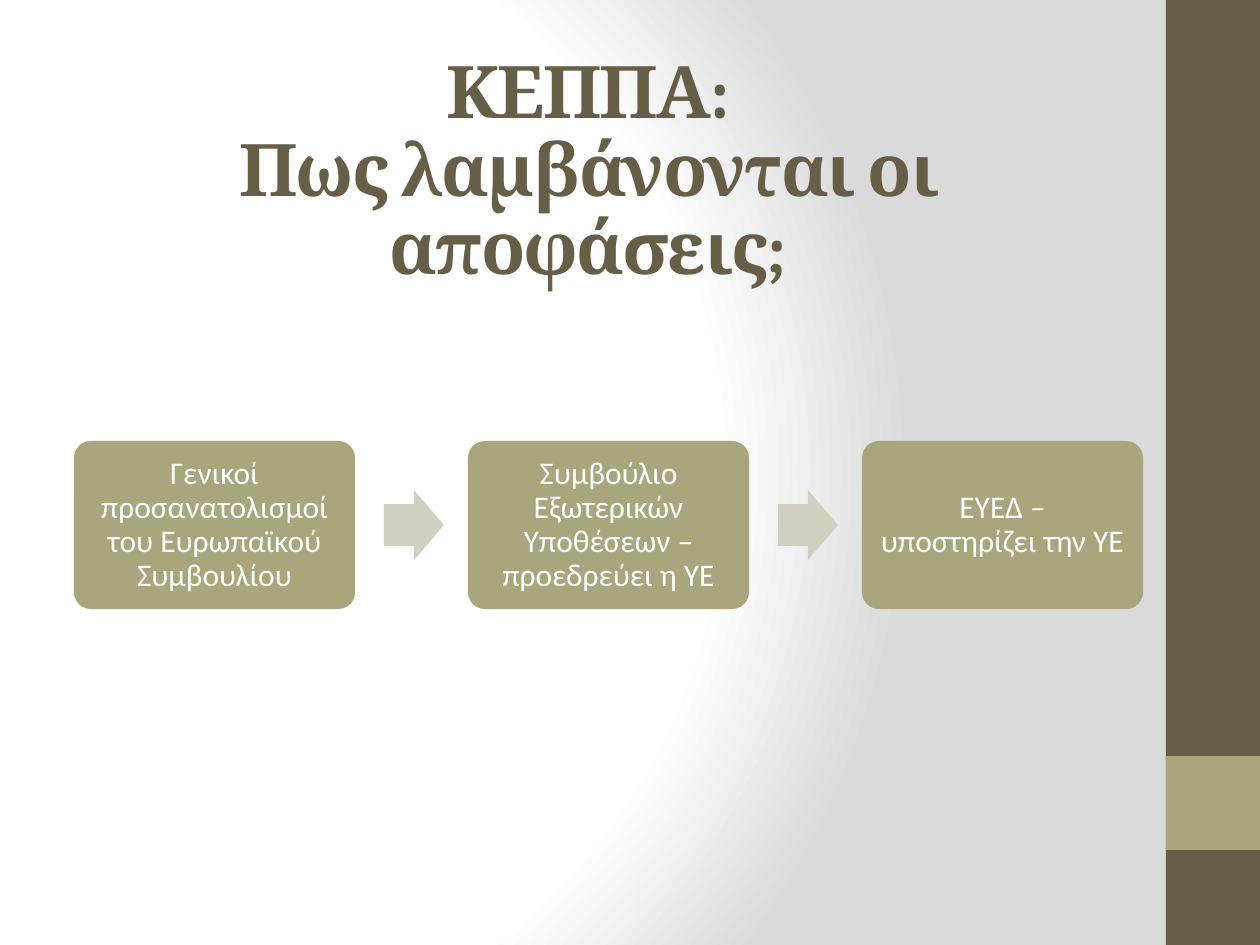
from pptx import Presentation
from pptx.dml.color import RGBColor
from pptx.enum.shapes import MSO_SHAPE as Shape
from pptx.enum.text import MSO_ANCHOR as Anchor, PP_ALIGN as Align
from pptx.oxml import parse_xml
from pptx.oxml.ns import nsdecls, qn
from pptx.util import Pt

SCALE = 914400 / 126
PAGE_WIDTH, PAGE_HEIGHT = 1260, 945
BROWN = RGBColor(0x67, 0x5E, 0x47)
OLIVE = RGBColor(0xA9, 0xA5, 0x7C)
PALE = RGBColor(0xD1, 0xCF, 0xBF)
WHITE = RGBColor(0xFF, 0xFF, 0xFF)
SILVER = RGBColor(0xDA, 0xDA, 0xDA)
TITLE = "ΚΕΠΠΑ:\vΠως λαμβάνονται οι αποφάσεις;"
STEPS = [
    "Γενικοί προσανατολισμοί του Ευρωπαϊκού Συμβουλίου",
    "Συμβούλιο Εξωτερικών Υποθέσεων – προεδρεύει η ΥΕ",
    "ΕΥΕΔ – υποστηρίζει την ΥΕ",
]


def emu(*lengths):
    """Turn px lengths into EMU."""
    return [round(length * SCALE) for length in lengths]


def add_filled(page, kind, box, color, adjustments=()):
    """Add a plain filled shape without line or shadow."""
    shape = page.shapes.add_shape(kind, *emu(*box))
    shape.shadow.inherit = False
    shape.fill.solid()
    shape.fill.fore_color.rgb = color
    shape.line.fill.background()
    for index, value in enumerate(adjustments):
        shape.adjustments[index] = value
    return shape


def write_text(shape, text, font, size, color, bold=False):
    """Write centred, wrapped text and return its paragraph."""
    frame = shape.text_frame
    frame.word_wrap = True
    frame.vertical_anchor = Anchor.MIDDLE
    frame.text = text
    para = frame.paragraphs[0]
    para.alignment = Align.CENTER
    para.line_spacing = 0.9
    for span in para.runs:
        span.font.name = font
        span.font.size = Pt(size)
        span.font.bold = bold
        span.font.color.rgb = color
    return para


def paint_background(page):
    """Fill the page with a round gradient from white to silver."""
    page.background.fill.gradient()
    old = page.element.find(".//" + qn("a:gradFill"))
    stops = "".join(
        f'<a:gs pos="{place * 1000}"><a:srgbClr val="{color}"/></a:gs>'
        for place, color in [(0, WHITE), (75, WHITE), (100, SILVER)]
    )
    old.getparent().replace(old, parse_xml(
        f'<a:gradFill {nsdecls("a")} rotWithShape="1"><a:gsLst>{stops}</a:gsLst>'
        '<a:path path="circle"><a:fillToRect l="20000" t="50000" r="100000" b="50000"/>'
        "</a:path></a:gradFill>"
    ))


def add_sidebar(page, box):
    """Draw the side band with its square accent."""
    left, top, width, height = box
    add_filled(page, Shape.RECTANGLE, box, BROWN)
    accent_top = top + height * 4 // 5
    add_filled(page, Shape.RECTANGLE, (left, accent_top, width, width), OLIVE)


def add_title(page, box):
    """Place the slide title."""
    title = page.shapes.add_textbox(*emu(*box))
    para = write_text(title, TITLE, "Cambria", 41.4, BROWN, bold=True)
    for span in para.runs:
        span.font._element.set("spc", "-100")


def add_process(page, box):
    """Draw the steps in a row with an arrow between neighbours."""
    left, top, width, height = box
    step_width, arrow_width, arrow_height, arrow_gap = 281, 60, 70, 29
    pitch = (width - step_width) // (len(STEPS) - 1)
    for index, text in enumerate(STEPS):
        step_left = left + index * pitch
        step_box = (step_left, top, step_width, height)
        step = add_filled(page, Shape.ROUNDED_RECTANGLE, step_box, OLIVE, [0.1])
        frame = step.text_frame
        frame.margin_left, frame.margin_top, frame.margin_right, frame.margin_bottom = emu(14, 14, 14, 14)
        write_text(step, text, "Calibri", 18, WHITE)
        if index < len(STEPS) - 1:
            arrow_box = (step_left + step_width + arrow_gap,
                         top + (height - arrow_height) // 2, arrow_width, arrow_height)
            add_filled(page, Shape.RIGHT_ARROW, arrow_box, PALE, [0.6, 0.5])


def main():
    """Build the deck and save it."""
    deck = Presentation()
    deck.slide_width, deck.slide_height = emu(PAGE_WIDTH, PAGE_HEIGHT)
    page = deck.slides.add_slide(deck.slide_layouts[6])
    paint_background(page)
    add_sidebar(page, (1166, 0, 94, PAGE_HEIGHT))
    add_title(page, (63, 94, 1050, 158))
    add_process(page, (74, 441, 1069, 168))
    deck.save("out.pptx")


if __name__ == "__main__":
    main()
